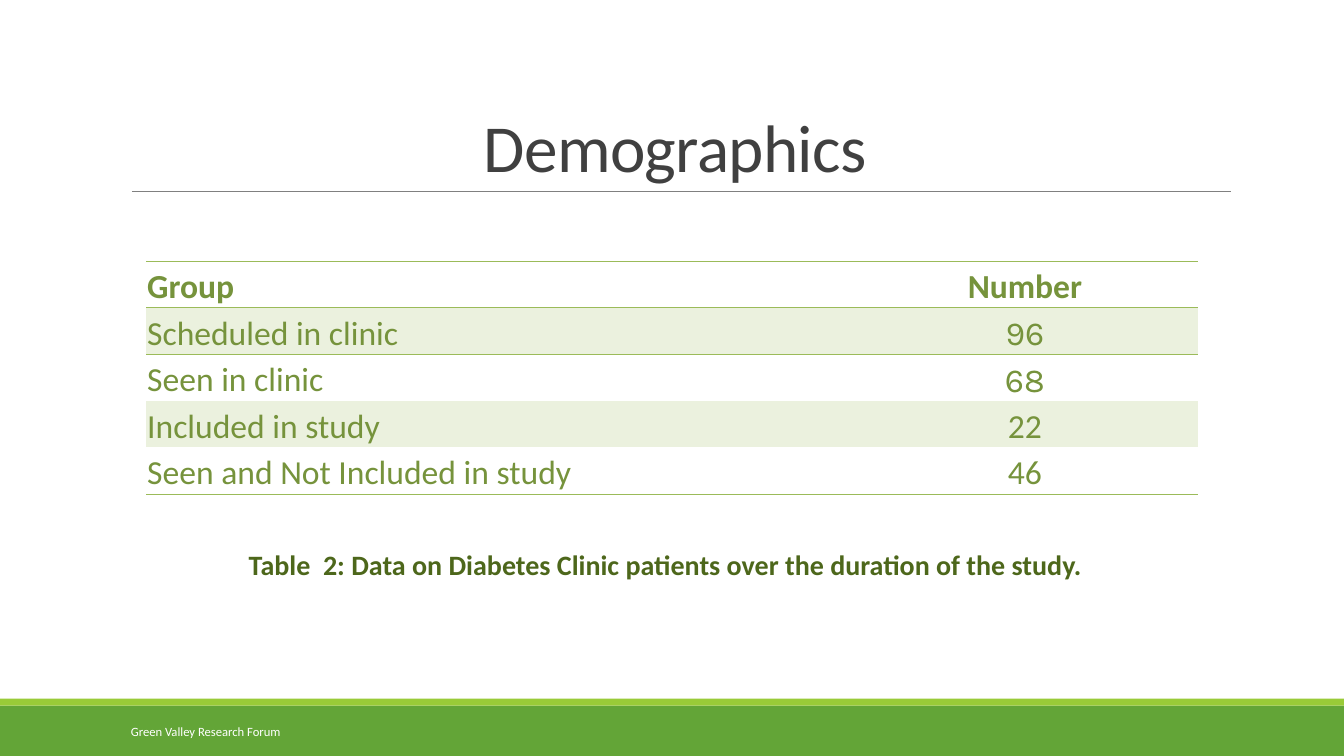
from lxml.etree import SubElement
from pptx import Presentation
from pptx.dml.color import RGBColor
from pptx.enum.shapes import MSO_CONNECTOR, MSO_SHAPE
from pptx.enum.text import MSO_ANCHOR, PP_ALIGN
from pptx.oxml.ns import qn
from pptx.util import Pt

WHITE = RGBColor(0xFF, 0xFF, 0xFF)
GREEN = RGBColor(0x63, 0xA5, 0x37)
LIME = RGBColor(0x99, 0xCB, 0x38)
GREY = RGBColor(0x80, 0x80, 0x80)
CHARCOAL = RGBColor(0x40, 0x40, 0x40)
OLIVE = RGBColor(0x76, 0x93, 0x3C)
DARK_OLIVE = RGBColor(0x4D, 0x67, 0x1B)
RULE_GREEN = RGBColor(0x9B, 0xBB, 0x59)
BAND = RGBColor(0xEB, 0xF1, 0xDE)

WIDTH, HEIGHT = 960, 540
PLAIN_TABLE_STYLE = "{2D5ABB26-0587-4C30-8999-92F81FD0307C}"

# Label, value and the font of the value
GROUPS = [
    ("Group", "Number", "Calibri"),
    ("Scheduled in clinic", "96", "Karla"),
    ("Seen in clinic", "68", "Karla"),
    ("Included in study", "22", "Calibri"),
    ("Seen and Not Included in study", "46", "Calibri"),
]


class SlideBuilder:
    font = "Calibri"

    def __init__(self, slide):
        self.slide = slide

    def bar(self, top, height, color):
        shape = self.slide.shapes.add_shape(
            MSO_SHAPE.RECTANGLE, 0, Pt(top), Pt(WIDTH), Pt(height))
        shape.shadow.inherit = False
        shape.fill.solid()
        shape.fill.fore_color.rgb = color
        shape.line.fill.background()

    def rule(self, left, right, top, color):
        line = self.slide.shapes.add_connector(
            MSO_CONNECTOR.STRAIGHT, Pt(left), Pt(top), Pt(right), Pt(top))
        line.line.color.rgb = color
        line.line.width = Pt(0.5)
        SubElement(line._element.spPr, qn("a:effectLst"))

    def styled_run(self, paragraph, text, size, color, bold=False, font=None,
                   align=PP_ALIGN.LEFT):
        paragraph.alignment = align
        run = paragraph.add_run()
        run.text = text
        run.font.name = font or self.font
        run.font.size = Pt(size)
        run.font.bold = bold
        run.font.color.rgb = color
        return run

    def text(self, left, top, width, height, text, size, color,
             anchor=MSO_ANCHOR.TOP, spacing=None, tracking=0, **style):
        frame = self.slide.shapes.add_textbox(
            Pt(left), Pt(top), Pt(width), Pt(height)).text_frame
        frame.word_wrap = True
        frame.vertical_anchor = anchor
        paragraph = frame.paragraphs[0]
        paragraph.line_spacing = spacing
        run = self.styled_run(paragraph, text, size, color, **style)
        if tracking:
            run._r.get_or_add_rPr().set("spc", str(int(tracking * 100)))

    def border(self, cell, side):
        line = SubElement(cell._tc.get_or_add_tcPr(), qn(f"a:ln{side}"),
                          w=str(int(Pt(0.5))))
        fill = SubElement(line, qn("a:solidFill"))
        SubElement(fill, qn("a:srgbClr"), val=str(RULE_GREEN))

    def table(self, left, top, widths, row_height, rows):
        table = self.slide.shapes.add_table(
            len(rows), len(widths), Pt(left), Pt(top),
            Pt(sum(widths)), Pt(row_height * len(rows))).table
        table.first_row = table.horz_banding = False
        table._tbl.tblPr.find(qn("a:tableStyleId")).text = PLAIN_TABLE_STYLE
        for column, width in zip(table.columns, widths):
            column.width = Pt(width)
        for index, (label, value, value_font) in enumerate(rows):
            table.rows[index].height = Pt(row_height)
            columns = [(label, self.font, PP_ALIGN.LEFT),
                       (value, value_font, PP_ALIGN.CENTER)]
            for cell, (text, font, align) in zip(table.rows[index].cells, columns):
                cell.vertical_anchor = MSO_ANCHOR.BOTTOM
                cell.margin_left = cell.margin_right = cell.margin_top = Pt(0.75)
                cell.margin_bottom = 0
                # Borders come before the fill in the cell properties
                if index <= 1:
                    self.border(cell, "T")
                if index in (0, len(rows) - 1):
                    self.border(cell, "B")
                if index % 2:
                    cell.fill.solid()
                    cell.fill.fore_color.rgb = BAND
                else:
                    cell.fill.background()
                self.styled_run(cell.text_frame.paragraphs[0], text, 24, OLIVE,
                                bold=index == 0, font=font, align=align)


def main():
    presentation = Presentation()
    presentation.slide_width, presentation.slide_height = Pt(WIDTH), Pt(HEIGHT)
    slide = presentation.slides.add_slide(presentation.slide_layouts[6])
    builder = SlideBuilder(slide)

    # Footer bars and title rule
    builder.bar(504, 36, GREEN)
    builder.bar(499, 5, LIME)
    builder.rule(94.3, 879, 136.8, GREY)

    # Title and footer
    builder.text(86.4, 22.3, 792, 114.5, "Demographics", 48, CHARCOAL,
                 anchor=MSO_ANCHOR.BOTTOM, spacing=0.85, tracking=-0.5,
                 align=PP_ALIGN.CENTER)
    builder.text(86.4, 508.3, 194.4, 28.8, "Green Valley Research Forum", 9,
                 WHITE, anchor=MSO_ANCHOR.MIDDLE)

    # Patient table and caption
    builder.table(104.4, 186.5, [504, 247.4], 33.3, GROUPS)
    builder.text(170.6, 387.4, 617.8, 31.7,
                 "Table  2: Data on Diabetes Clinic patients over the duration "
                 "of the study.", 20, DARK_OLIVE, bold=True)

    presentation.save("out.pptx")


if __name__ == "__main__":
    main()
